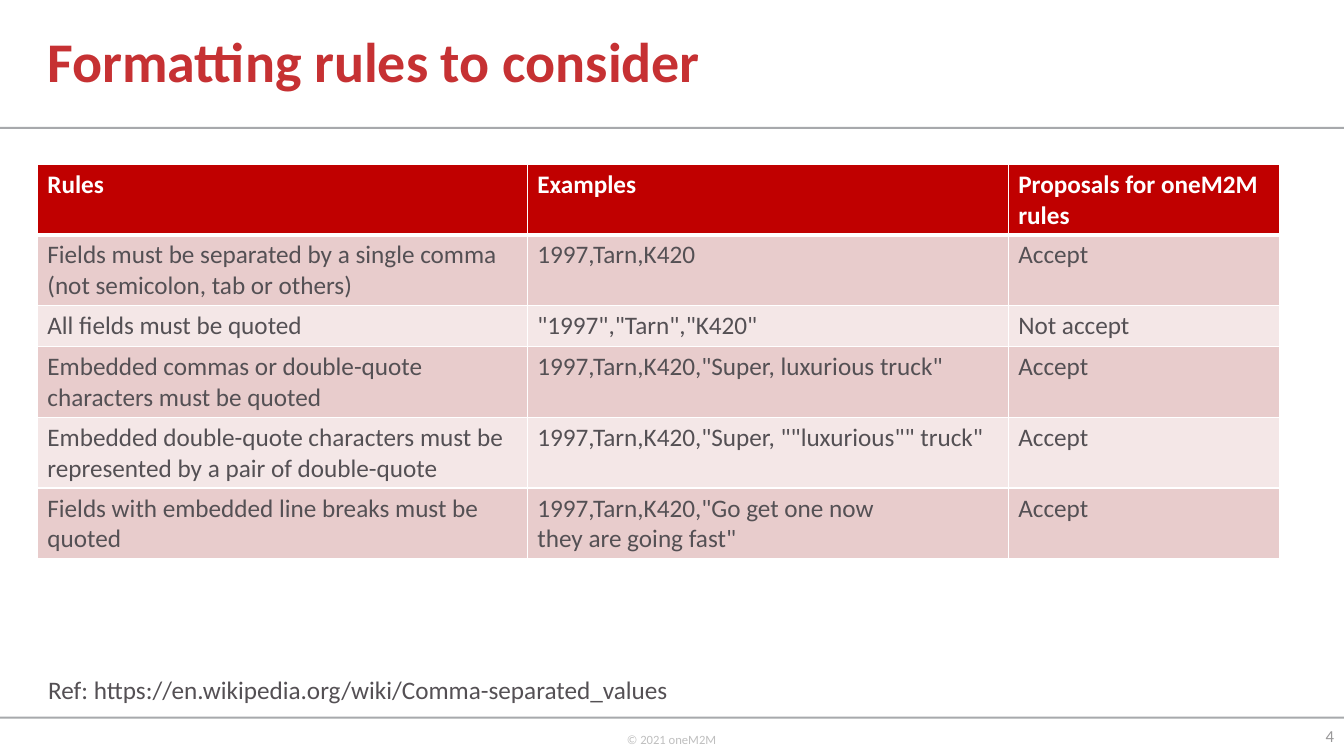
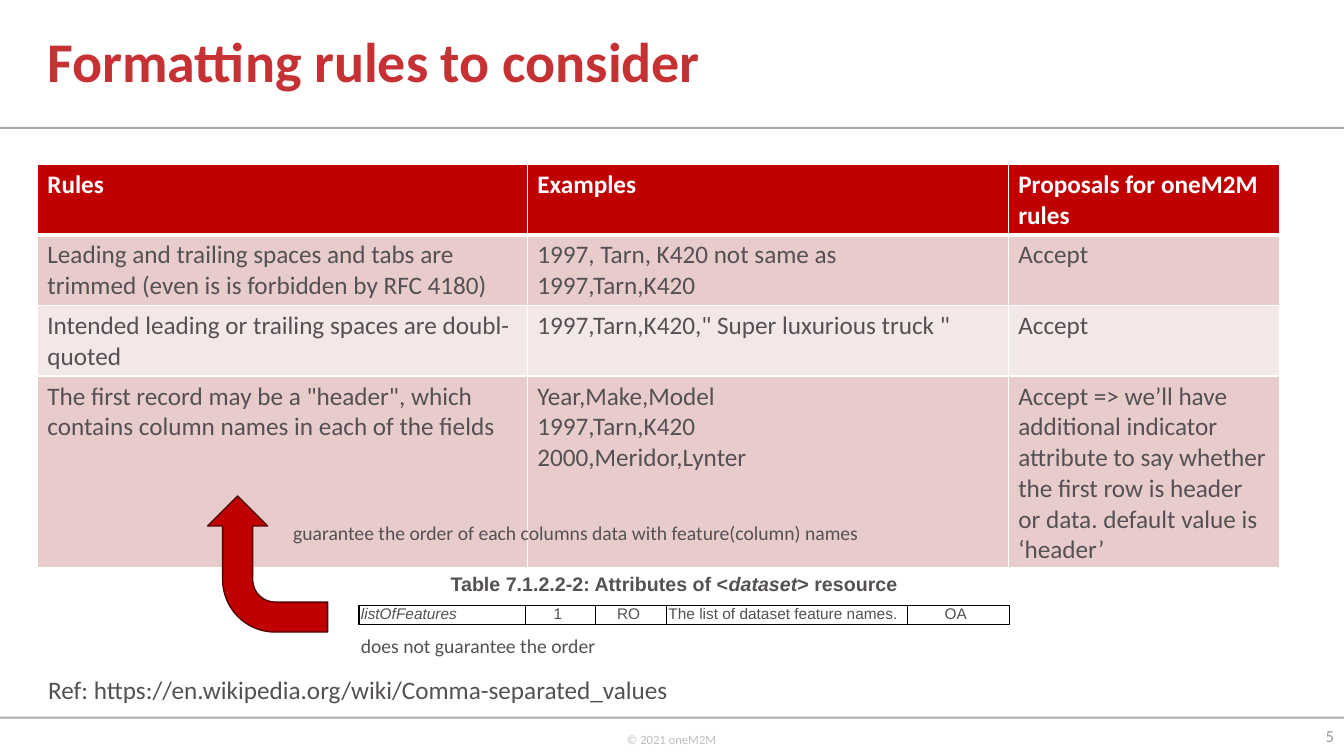
from dataclasses import dataclass

from lxml import etree
from pptx import Presentation
from pptx.dml.color import RGBColor
from pptx.enum import shapes, text
from pptx.oxml.ns import qn
from pptx.util import Inches, Pt


@dataclass(frozen=True)
class Theme:
    font: str = "Calibri"
    table_font: str = "Arial"
    title: str = "C63133"
    ink: str = "545054"
    white: str = "FFFFFF"
    black: str = "000000"
    band: str = "A7A9AC"
    copyright: str = "BFBFBF"
    number: str = "999899"
    red: str = "C00000"
    arrow_edge: str = "540000"
    stripes: tuple = ("E8CCCC", "F4E7E7")
    title_size: int = 40
    body_size: int = 18
    note_size: int = 14
    number_size: int = 12
    attribute_size: int = 11
    copyright_size: int = 9


THEME = Theme()
LEFT, CENTER, RIGHT = text.PP_ALIGN.LEFT, text.PP_ALIGN.CENTER, text.PP_ALIGN.RIGHT
SLIDE_WIDTH = 13.33
BAND_TOPS = (1.26, 7.11)
RULE_COLUMNS = (4.86, 4.77, 2.69)
ATTRIBUTE_COLUMNS = (1.65, 0.7, 0.7, 2.39, 1.01)

TITLE = "Formatting rules to consider"
COPYRIGHT = "© 2021 oneM2M"
REFERENCE = "Ref: https://en.wikipedia.org/wiki/Comma-separated_values"
HEADINGS = ("Rules", "Examples", "Proposals for oneM2M rules")
RULES_BY_SLIDE = {
    4: [
        ("Fields must be separated by a single comma\n(not semicolon, tab or others)",
         "1997,Tarn,K420", "Accept"),
        ("All fields must be quoted", '"1997","Tarn","K420"', "Not accept"),
        ("Embedded commas or double-quote characters must be quoted",
         '1997,Tarn,K420,"Super, luxurious truck"', "Accept"),
        ("Embedded double-quote characters must be represented by a pair of double-quote",
         '1997,Tarn,K420,"Super, ""luxurious"" truck"', "Accept"),
        ("Fields with embedded line breaks must be quoted",
         '1997,Tarn,K420,"Go get one now\nthey are going fast"', "Accept"),
    ],
    5: [
        ("Leading and trailing spaces and tabs are trimmed (even is is forbidden by RFC 4180)",
         "1997, Tarn, K420 not same as 1997,Tarn,K420", "Accept"),
        ("Intended leading or trailing spaces are doubl-quoted",
         '1997,Tarn,K420," Super luxurious truck "', "Accept"),
        ('The first record may be a "header", which contains column names in each of the fields',
         "Year,Make,Model\n1997,Tarn,K420\n2000,Meridor,Lynter",
         "Accept => we’ll have additional indicator attribute to say whether "
         "the first row is header or data. default value is ‘header’"),
    ],
}
CAPTION = (("Table 7.1.2.2-2: Attributes of <", False), ("dataset", True), ("> resource", False))
ATTRIBUTES = (("listOfFeatures", LEFT), ("1", CENTER), ("RO", CENTER),
              ("The list of dataset feature names.", LEFT), ("OA", CENTER))
NOTES = (
    ("does not guarantee the order", (3.48, 6.24, 2.55, 0.34)),
    ("guarantee the order of each columns data with feature(column) names",
     (2.81, 5.12, 5.86, 0.34)),
)


def rgb(color):
    return RGBColor.from_string(color)


def inches(box):
    return [Inches(length) for length in box]


def add_run(paragraph, words, size, color, bold=False, italic=False, font=THEME.font):
    run = paragraph.add_run()
    run.text = words
    run.font.name, run.font.size = font, Pt(size)
    run.font.bold, run.font.italic = bold, italic
    run.font.color.rgb = rgb(color)


def add_label(slide, box, words, size, color, align=LEFT, wrap=False,
              anchor=text.MSO_ANCHOR.TOP, **style):
    """Add one paragraph; words is a string or (text, italic) pairs."""
    label = slide.shapes.add_textbox(*inches(box))
    frame = label.text_frame
    frame.word_wrap, frame.vertical_anchor = wrap, anchor
    paragraph = frame.paragraphs[0]
    paragraph.alignment = align
    runs = ((words, False),) if isinstance(words, str) else words
    for part, italic in runs:
        add_run(paragraph, part, size, color, italic=italic, **style)
    return label


def add_preset(slide, preset, box, fill, edge=None):
    shape = slide.shapes.add_shape(preset, *inches(box))
    shape.shadow.inherit = False
    shape.fill.solid()
    shape.fill.fore_color.rgb = rgb(fill)
    if edge:
        shape.line.color.rgb = rgb(edge)
        shape.line.width = Pt(1)
    else:
        shape.line.fill.background()
    return shape


def set_borders(cell, color, top=1, bottom=1):
    properties = cell._tc.get_or_add_tcPr()
    for side, width in (("L", 1), ("R", 1), ("T", top), ("B", bottom)):
        line = etree.SubElement(properties, qn(f"a:ln{side}"), w=str(Pt(width)))
        fill = etree.SubElement(line, qn("a:solidFill"))
        etree.SubElement(fill, qn("a:srgbClr"), val=color)


def add_grid(slide, left, top, columns, row_count, row_height):
    frame = slide.shapes.add_table(row_count, len(columns), Inches(left), Inches(top),
                                   Inches(sum(columns)), Inches(row_height * row_count))
    grid = frame.table
    grid.horz_banding = False
    for column, width in zip(grid.columns, columns):
        column.width = Inches(width)
    return grid


def add_rules(slide, rules):
    grid = add_grid(slide, 0.37, 1.63, RULE_COLUMNS, len(rules) + 1, 0.41)
    for r, row in enumerate([HEADINGS, *rules]):
        heading = r == 0
        for c, words in enumerate(row):
            cell = grid.cell(r, c)
            set_borders(cell, THEME.white, top=3 if r == 1 else 1, bottom=3 if heading else 1)
            cell.fill.solid()
            cell.fill.fore_color.rgb = rgb(THEME.red if heading else THEME.stripes[(r - 1) % 2])
            frame = cell.text_frame
            for i, line in enumerate(words.split("\n")):
                paragraph = frame.add_paragraph() if i else frame.paragraphs[0]
                add_run(paragraph, line, THEME.body_size,
                        THEME.white if heading else THEME.ink, bold=heading)


def add_attributes(slide):
    grid = add_grid(slide, 3.56, 6.01, ATTRIBUTE_COLUMNS, 1, 0.18)
    grid.first_row = False
    for c, (words, align) in enumerate(ATTRIBUTES):
        cell = grid.cell(0, c)
        cell.margin_left, cell.margin_right = Inches(0.02), Inches(0.07)
        cell.margin_top = cell.margin_bottom = 0
        set_borders(cell, THEME.black)
        cell.fill.background()
        paragraph = cell.text_frame.paragraphs[0]
        paragraph.alignment = align
        add_run(paragraph, words, THEME.attribute_size, THEME.ink,
                italic=c == 0, font=THEME.table_font)


def add_order_notes(slide):
    add_attributes(slide)
    add_label(slide, (3.35, 5.62, 6.67, 0.34), CAPTION, THEME.note_size, THEME.ink,
              align=CENTER, wrap=True, bold=True, font=THEME.table_font)
    arrow = add_preset(slide, shapes.MSO_SHAPE.BENT_ARROW, (1.98, 5, 1.35, 1.19),
                       THEME.red, THEME.arrow_edge)
    arrow.rotation = 270
    for words, box in NOTES:
        add_label(slide, box, words, THEME.note_size, THEME.ink)


def prepare_layout(layout):
    """Place the title and keep no other placeholder on the layout."""
    for holder in list(layout.placeholders):
        if holder.placeholder_format.type == shapes.PP_PLACEHOLDER.TITLE:
            holder.left, holder.top, holder.width, holder.height = inches((0.37, 0, 10.07, 1.28))
        else:
            holder.element.getparent().remove(holder.element)


def add_frame(slide, layout):
    """Draw the bands and copyright line, then hand them to the layout."""
    parts = [add_preset(slide, shapes.MSO_SHAPE.RECTANGLE, (0, top, SLIDE_WIDTH, 0.02), THEME.band)
             for top in BAND_TOPS]
    parts.append(add_label(slide, (6.12, 7.21, 1.1, 0.4), COPYRIGHT,
                           THEME.copyright_size, THEME.copyright))
    for part in parts:
        layout.shapes.element.append(part.element)


def add_page(slide, number, rules):
    frame = slide.shapes.title.text_frame
    frame.auto_size = text.MSO_AUTO_SIZE.NONE
    frame.vertical_anchor = text.MSO_ANCHOR.MIDDLE
    heading = frame.paragraphs[0]
    heading.alignment, heading.line_spacing = LEFT, 0.9
    add_run(heading, TITLE, THEME.title_size, THEME.title, bold=True)
    add_label(slide, (12.79, 7.1, 0.54, 0.4), str(number), THEME.number_size, THEME.number,
              align=RIGHT, wrap=True, anchor=text.MSO_ANCHOR.MIDDLE)
    add_label(slide, (0.38, 6.64, 6.42, 0.4), REFERENCE, THEME.body_size, THEME.ink)
    add_rules(slide, rules)


def main():
    deck = Presentation()
    deck.slide_width, deck.slide_height = Inches(SLIDE_WIDTH), Inches(7.5)
    layout = deck.slide_layouts.get_by_name("Title Only")
    prepare_layout(layout)
    pages = {number: deck.slides.add_slide(layout) for number in RULES_BY_SLIDE}
    add_frame(pages[4], layout)
    for number, rules in RULES_BY_SLIDE.items():
        add_page(pages[number], number, rules)
    add_order_notes(pages[5])
    deck.save("out.pptx")


if __name__ == "__main__":
    main()
